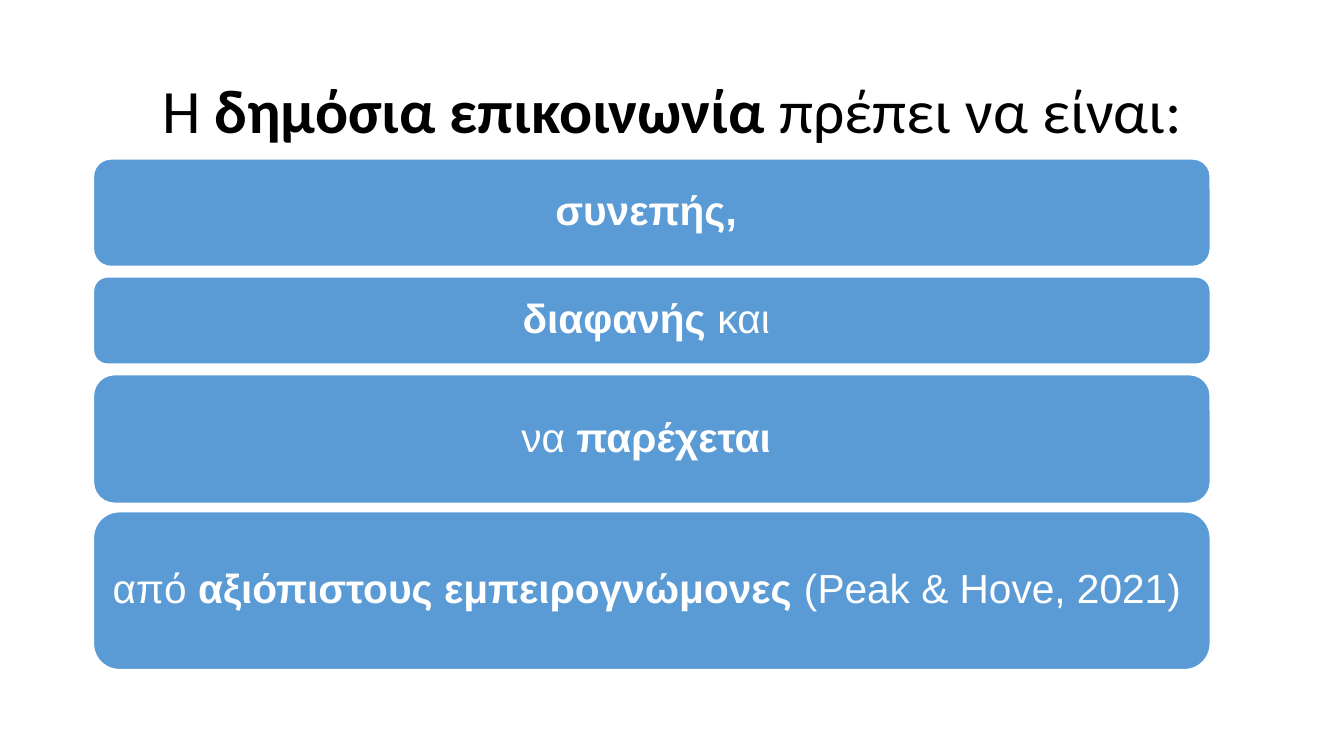
"""Build a slide listing the qualities of public communication."""
from dataclasses import dataclass

from pptx import Presentation
from pptx.dml.color import RGBColor
from pptx.enum.shapes import MSO_SHAPE
from pptx.enum.text import MSO_ANCHOR, PP_ALIGN
from pptx.slide import Slide
from pptx.text.text import TextFrame
from pptx.util import Emu, Pt

EMU_PER_PX = 9144
BAR_LEFT, BAR_WIDTH, BAR_INSET = 92, 1109, 12
BLUE, WHITE, BLACK = "5B9BD5", "FFFFFF", "000000"


@dataclass(frozen=True)
class Span:
    """A stretch of text in one weight."""
    text: str
    bold: bool = False


@dataclass(frozen=True)
class Bar:
    """A rounded bar with one line of text."""
    top: int
    height: int
    spans: tuple[Span, ...]
    align: PP_ALIGN = PP_ALIGN.CENTER


TITLE = (Span("Η "), Span("δημόσια επικοινωνία", True), Span(" πρέπει να είναι:"))
BARS = (
    Bar(157, 108, (Span("συνεπής, ", True),)),
    Bar(274, 88, (Span("διαφανής", True), Span(" και "))),
    Bar(371, 129, (Span("να "), Span("παρέχεται ", True))),
    Bar(507, 158, (Span("από "), Span("αξιόπιστους εμπειρογνώμονες ", True),
                   Span("(Peak & Hove, 2021)")), PP_ALIGN.LEFT),
)


def px(length: int) -> Emu:
    """Turn px into EMU."""
    return Emu(length * EMU_PER_PX)


def color(value: str) -> RGBColor:
    """Turn a hex string into a colour."""
    return RGBColor.from_string(value)


def write(frame: TextFrame, spans: tuple[Span, ...], font: str, size: int,
          ink: str, align: PP_ALIGN) -> None:
    """Write one vertically centred paragraph, run by run."""
    frame.word_wrap = True
    frame.vertical_anchor = MSO_ANCHOR.MIDDLE
    para = frame.paragraphs[0]
    para.alignment = align
    para.line_spacing = 0.9
    for span in spans:
        run = para.add_run()
        run.text = span.text
        run.font.name = font
        run.font.size = Pt(size)
        run.font.bold = span.bold
        run.font.color.rgb = color(ink)


def add_title(page: Slide) -> None:
    """Place and fill the title placeholder."""
    title = page.shapes.title
    title.left, title.top, title.width, title.height = map(px, (92, 40, 1150, 145))
    write(title.text_frame, TITLE, "Calibri", 44, BLACK, PP_ALIGN.CENTER)


def add_bar(page: Slide, bar: Bar) -> None:
    """Draw one rounded bar with its text."""
    box = page.shapes.add_shape(MSO_SHAPE.ROUNDED_RECTANGLE, px(BAR_LEFT),
                                px(bar.top), px(BAR_WIDTH), px(bar.height))
    box.shadow.inherit = False
    box.fill.solid()
    box.fill.fore_color.rgb = color(BLUE)
    box.line.color.rgb = color(WHITE)
    box.line.width = Pt(2)
    frame = box.text_frame
    frame.margin_left = frame.margin_right = px(BAR_INSET)
    frame.margin_top = frame.margin_bottom = px(BAR_INSET)
    write(frame, bar.spans, "Arial", 29, WHITE, bar.align)


def main() -> None:
    """Build and save the deck."""
    deck = Presentation()
    deck.slide_width, deck.slide_height = px(1333), px(750)
    page = deck.slides.add_slide(deck.slide_layouts[5])
    add_title(page)
    for bar in BARS:
        add_bar(page, bar)
    deck.save("out.pptx")


if __name__ == "__main__":
    main()
